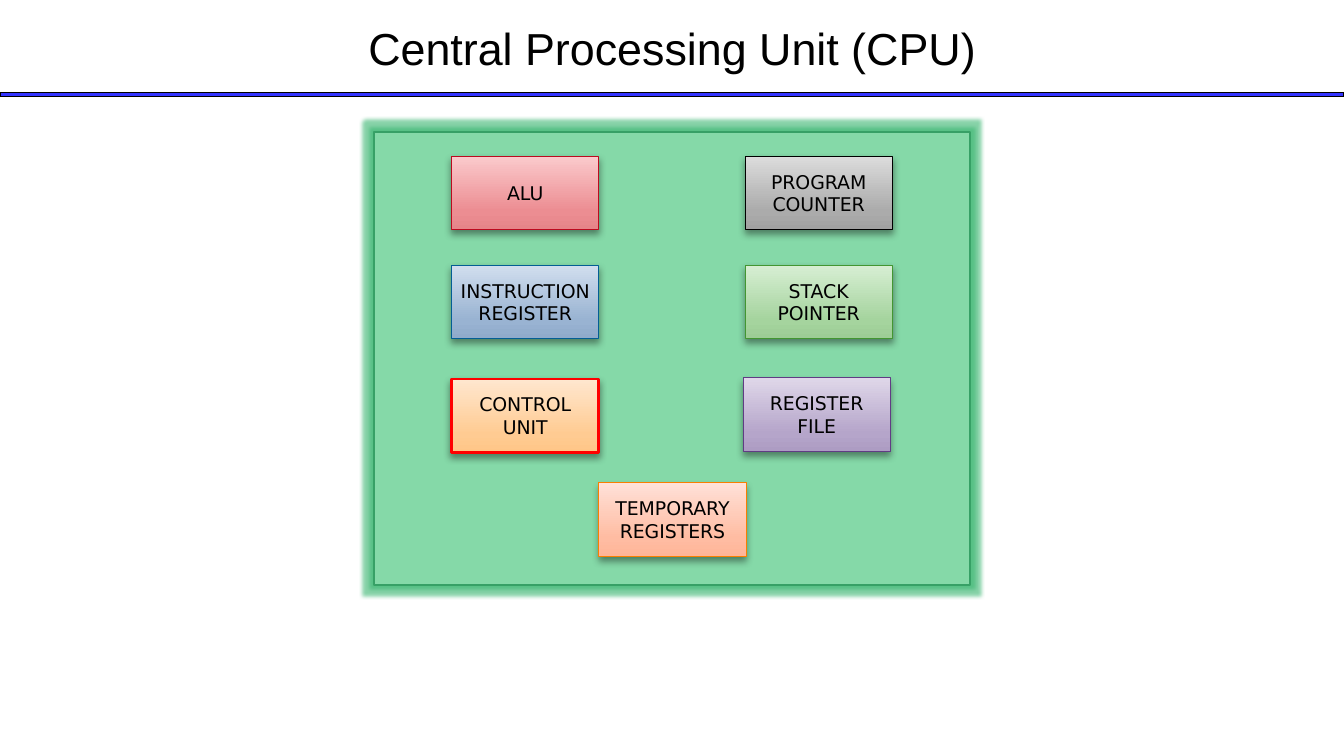
import copy
from dataclasses import dataclass

import pptx
import pptx.dml.color
import pptx.enum.shapes
import pptx.enum.text
import pptx.oxml
import pptx.oxml.ns
import pptx.util
from pptx.util import Inches


@dataclass(frozen=True)
class Theme:
    title_font: str = "Arial"
    block_font: str = "DejaVu Sans"
    title_size: float = 32
    block_size: float = 13.5
    text: str = "000000"
    rule: str = "3333FF"
    panel: str = "85D9A8"
    panel_edge: str = "37A066"
    glow: str = "37B56F"
    highlight: str = "FF0000"


THEME = Theme()
BLOCK_W, BLOCK_H = 1.46, 0.73
GRADIENT_POSITIONS = (0, 0.25, 1)

# paragraphs, left, top, gradient from bottom to top, outline, outline width
BLOCKS = [
    (["CONTROL", "UNIT"], 4.48, 3.76, ("FFC687", "FFCB92", "FFE7CF"), THEME.highlight, 2),
    (["ALU"], 4.48, 1.55, ("E68589", "EC8D92", "FBCACC"), "BC0B1F", 0.75),
    (["INSTRUCTION", "REGISTER"], 4.48, 2.63, ("90ABCB", "99B3D2", "D1DEEE"), "035E94", 0.75),
    (["PROGRAM COUNTER"], 7.39, 1.55, ("A2A2A2", "ABABAB", "DCDCDC"), "000000", 0.75),
    (["STACK POINTER"], 7.39, 2.63, ("9DCD96", "A5D49E", "D7EED3"), "439631", 0.75),
    (["REGISTER", "FILE"], 7.37, 3.75, ("AD9CC3", "B5A5CA", "DFD7E9"), "603C84", 0.75),
    (["TEMPORARY", "REGISTERS"], 5.94, 4.79, ("FFB598", "FFBCA2", "FFE1D8"), "F97F00", 0.75),
]


def rgb(value):
    return pptx.dml.color.RGBColor.from_string(value)


def add_rect(s, left, top, width, height, line, line_width, fill=None):
    sp = s.shapes.add_shape(
        pptx.enum.shapes.MSO_SHAPE.RECTANGLE,
        Inches(left), Inches(top), Inches(width), Inches(height))
    sp.shadow.inherit = False
    sp.line.color.rgb = rgb(line)
    sp.line.width = pptx.util.Pt(line_width)
    if fill:
        sp.fill.solid()
        sp.fill.fore_color.rgb = rgb(fill)
    return sp


def set_gradient(sp, colors):
    """Fill with three stops that run from the bottom edge upward."""
    sp.fill.gradient()
    sp.fill.gradient_angle = 90
    stops = sp._element.spPr.find(".//" + pptx.oxml.ns.qn("a:gsLst"))
    stops.append(copy.deepcopy(stops[0]))
    for stop, position, color in zip(sp.fill.gradient_stops, GRADIENT_POSITIONS, colors):
        stop.position = position
        stop.color.rgb = rgb(color)


def add_effect(sp, tag, color, alpha, **lengths):
    attrs = " ".join(f'{name}="{value}"' for name, value in lengths.items())
    effect = pptx.oxml.parse_xml(
        f'<a:{tag} {pptx.oxml.ns.nsdecls("a")} {attrs}><a:srgbClr val="{color}">'
        f'<a:alpha val="{alpha * 1000}"/></a:srgbClr></a:{tag}>')
    sp._element.spPr.find(pptx.oxml.ns.qn("a:effectLst")).append(effect)


def write_text(sp, lines, font, size, inset):
    tf = sp.text_frame
    frame = dict.fromkeys(
        ("margin_left", "margin_top", "margin_right", "margin_bottom"), Inches(inset))
    frame.update(word_wrap=True, vertical_anchor=pptx.enum.text.MSO_ANCHOR.MIDDLE)
    for name, value in frame.items():
        setattr(tf, name, value)
    for i, line in enumerate(lines):
        p = tf.paragraphs[0] if i == 0 else tf.add_paragraph()
        p.alignment = pptx.enum.text.PP_ALIGN.CENTER
        r = p.add_run()
        r.text = line
        for name, value in {"name": font, "size": pptx.util.Pt(size)}.items():
            setattr(r.font, name, value)
        r.font.color.rgb = rgb(THEME.text)


def add_title(s, text):
    sp = s.shapes.add_textbox(Inches(0.67), Inches(0.15), Inches(12), Inches(0.64))
    write_text(sp, [text], THEME.title_font, THEME.title_size, 0.05)


def add_panel(s):
    sp = add_rect(s, 3.71, 1.31, 5.91, 4.49, THEME.panel_edge, 1.5, THEME.panel)
    add_effect(sp, "glow", THEME.glow, 60, rad=pptx.util.Pt(5))


def add_block(s, lines, left, top, colors, line, line_width):
    sp = add_rect(s, left, top, BLOCK_W, BLOCK_H, line, line_width)
    set_gradient(sp, colors)
    add_effect(sp, "outerShdw", "000000", 40, blurRad=pptx.util.Pt(5.2),
               dist=pptx.util.Pt(3), dir=90 * 60000, rotWithShape=0)
    write_text(sp, lines, THEME.block_font, THEME.block_size, 0.03)


def main():
    prs = pptx.Presentation()
    prs.slide_width, prs.slide_height = Inches(13.33), Inches(7.5)
    s = prs.slides.add_slide(prs.slide_layouts[6])
    add_rect(s, 0, 0.92, 13.33, 0.04, THEME.text, 1, THEME.rule)
    add_title(s, "Central Processing Unit (CPU)")
    add_panel(s)
    for block in BLOCKS:
        add_block(s, *block)
    prs.save("out.pptx")


if __name__ == "__main__":
    main()
